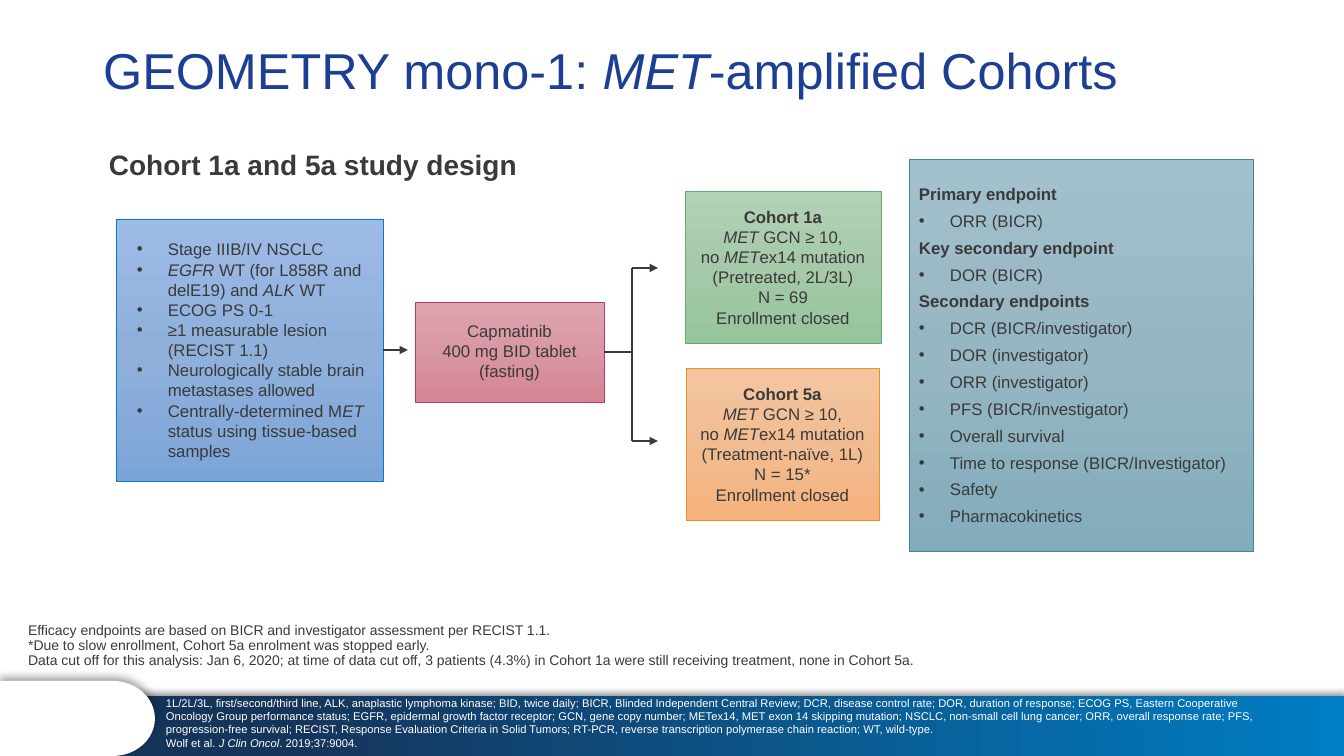
"""Build the GEOMETRY mono-1 study design slide."""
from math import cos, pi, sin

from lxml.etree import SubElement
from pptx import Presentation
from pptx.dml.color import RGBColor
from pptx.enum.shapes import MSO_CONNECTOR, MSO_SHAPE
from pptx.enum.text import MSO_ANCHOR, MSO_AUTO_SIZE, PP_ALIGN
from pptx.oxml import parse_xml
from pptx.oxml.ns import nsdecls, qn
from pptx.util import Pt

PX = 9072
INK = "3A3A3A"
color = RGBColor.from_string


def write(frame, lines, size, ink=INK, align=PP_ALIGN.LEFT, anchor=MSO_ANCHOR.MIDDLE,
          spacing=None, before=0, bullet=None):
    """Fill a frame; # opens a bold line and _ encloses italics."""
    frame.word_wrap = True
    frame.auto_size = MSO_AUTO_SIZE.NONE
    frame.vertical_anchor = anchor
    for number, line in enumerate(lines):
        para = frame.add_paragraph() if number else frame.paragraphs[0]
        bold = line.startswith("#")
        properties = para._p.get_or_add_pPr()
        left, hanging, tab = bullet if bullet and not bold else (0, 0, 0)
        properties.set("marL", str(left * PX))
        properties.set("indent", str(-hanging * PX))
        if left:
            SubElement(properties, qn("a:buFont"), typeface="Arial")
            SubElement(properties, qn("a:buChar"), char="•")
        else:
            SubElement(properties, qn("a:buNone"))
        if tab:
            tabs = SubElement(properties, qn("a:tabLst"))
            SubElement(tabs, qn("a:tab"), pos=str(tab * PX), algn="l")
        para.alignment = align
        para.space_before = Pt(before if number else 0)
        if spacing:
            para.line_spacing = spacing
        for part, text in enumerate(line.lstrip("#").split("_")):
            if text:
                span = para.add_run()
                span.text = text
                span.font.name = "Arial"
                span.font.size = Pt(size)
                span.font.bold = bold
                span.font.italic = part % 2 == 1
                span.font.color.rgb = color(ink)


def add_panel(x, y, width, height, stops, angle):
    """Add a rectangle filled with a linear gradient."""
    panel = page.shapes.add_shape(MSO_SHAPE.RECTANGLE, x * PX, y * PX, width * PX, height * PX)
    panel.shadow.inherit = False
    panel.line.fill.background()
    marks = "".join(f'<a:gs pos="{place * 1000}"><a:srgbClr val="{tone}"/></a:gs>'
                    for place, tone in stops)
    gradient = parse_xml(f'<a:gradFill {nsdecls("a")} rotWithShape="1"><a:gsLst>{marks}</a:gsLst>'
                         f'<a:lin ang="{angle * 60000}" scaled="0"/></a:gradFill>')
    panel._element.spPr.find(qn("a:prstGeom")).addnext(gradient)
    return panel


deck = Presentation()
deck.slide_width, deck.slide_height = 1344 * PX, 756 * PX
page = deck.slides.add_slide(deck.slide_layouts[1])

footer = add_panel(117, 696, 1227, 60, [(0, "007DC3"), (86, "15345A")], 180)
arc = [((113 + 42 * cos(step * pi / 24)) * PX, (718.5 + 37.5 * sin(step * pi / 24)) * PX)
       for step in range(-12, 13)]
outline = page.shapes.build_freeform(0, 681 * PX)
outline.add_line_segments(arc + [(0, 756 * PX)], close=True)
tab_shape = outline.convert_to_shape()
tab_shape.fill.solid()
tab_shape.fill.fore_color.rgb = color("FFFFFF")
tab_shape.line.fill.background()
tab_shape.shadow.inherit = False
for shape, blur, opacity in [(footer, 4, 40), (tab_shape, 6.1, 34)]:
    effects = shape._element.spPr.find(qn("a:effectLst"))
    shadow = SubElement(effects, qn("a:outerShdw"), blurRad=str(Pt(blur)), dist=str(Pt(3)),
                        dir="16200000", algn="b", rotWithShape="0")
    tone = SubElement(shadow, qn("a:srgbClr"), val="000000")
    SubElement(tone, qn("a:alpha"), val=str(opacity * 1000))

title = page.shapes.title
notes = page.placeholders[1]
subtitle = page.shapes.add_textbox(0, 0, PX, PX)
abbreviations = page.shapes.add_textbox(0, 0, PX, PX)
for box, x, y, width, height in [(title, 93, 0, 1159, 146), (notes, 18, 625, 1110, 49),
                                 (subtitle, 99, 143, 448, 42),
                                 (abbreviations, 156, 691, 1110, 65)]:
    box.left, box.top, box.width, box.height = x * PX, y * PX, width * PX, height * PX

write(title.text_frame, ["GEOMETRY mono-1: _MET_-amplified Cohorts"], 36, "1C3F93", spacing=0.9)
write(notes.text_frame, [
    "Efficacy endpoints are based on BICR and investigator assessment per RECIST 1.1.",
    "*Due to slow enrollment, Cohort 5a enrolment was stopped early.",
    "Data cut off for this analysis: Jan 6, 2020; at time of data cut off, 3 patients (4.3%) "
    "in Cohort 1a were still receiving treatment, none in Cohort 5a.",
], 10, anchor=MSO_ANCHOR.BOTTOM, spacing=0.9)
write(subtitle.text_frame, ["#Cohort 1a and 5a study design"], 20, anchor=MSO_ANCHOR.TOP)
write(abbreviations.text_frame, [
    "1L/2L/3L, first/second/third line, ALK, anaplastic lymphoma kinase; BID, twice daily; "
    "BICR, Blinded Independent Central Review; DCR, disease control rate; DOR, duration of "
    "response; ECOG PS, Eastern Cooperative Oncology Group performance status; EGFR, epidermal "
    "growth factor receptor; GCN, gene copy number; METex14, MET exon 14 skipping mutation; "
    "NSCLC, non-small cell lung cancer; ORR, overall response rate; PFS, progression-free "
    "survival; RECIST, Response Evaluation Criteria in Solid Tumors; RT-PCR, reverse "
    "transcription polymerase chain reaction; WT, wild-type.",
    "Wolf et al. _J Clin Oncol_. 2019;37:9004.",
], 8, "FFFFFF", anchor=MSO_ANCHOR.TOP)

centred = {"align": PP_ALIGN.CENTER}
panels = {
    "inclusion": ((116, 219, 267, 262), ("9DBBE5", "90B0DC", "7CA5D7"), "007DC3", [
        "Stage IIIB/IV NSCLC",
        "_EGFR_ WT (for L858R and delE19) and _ALK_ WT",
        "ECOG PS 0-1",
        "≥1 measurable lesion (RECIST 1.1)",
        "Neurologically stable brain metastases allowed",
        "Centrally-determined M_ET_ status using tissue-based samples",
    ], {"bullet": (42, 31, 36)}),
    "treatment": ((415, 302, 189, 100), ("DEA5B0", "D897A3", "D68394"), "BF3A61", [
        "Capmatinib", "400 mg BID tablet (fasting)",
    ], {"spacing": 0.99, **centred}),
    "cohort 1a": ((685, 191, 196, 152), ("B2D2B5", "A6CAA9", "96C49B"), "64AB6C", [
        "#Cohort 1a", "_MET_ GCN ≥ 10,", "no _MET_ex14 mutation (Pretreated, 2L/3L)",
        "N = 69", "Enrollment closed",
    ], centred),
    "cohort 5a": ((686, 368, 193, 152), ("F4C6A0", "F1BC92", "F5B37D"), "E8931A", [
        "#Cohort 5a", "_MET_ GCN ≥ 10,", "no _MET_ex14 mutation (Treatment-naïve, 1L)",
        "N = 15*", "Enrollment closed",
    ], centred),
    "endpoints": ((909, 159, 344, 392), ("A3C1CD", "96B6C2", "83ACBC"), "3A869B", [
        "#Primary endpoint", "ORR (BICR)", "#Key secondary endpoint", "DOR (BICR)",
        "#Secondary endpoints", "DCR (BICR/investigator)", "DOR (investigator)",
        "ORR (investigator)", "PFS (BICR/investigator)", "Overall survival",
        "Time to response (BICR/Investigator)", "Safety", "Pharmacokinetics",
    ], {"before": 4.8, "bullet": (31, 31, 0)}),
}
boxes = {}
for name, (place, tones, edge, lines, layout) in panels.items():
    box = add_panel(*place, list(zip((0, 50, 100), tones)), 90)
    box.line.color.rgb = color(edge)
    box.line.width = Pt(0.5)
    write(box.text_frame, lines, 12, **layout)
    boxes[name] = box

for x1, y1, x2, y2, arrow, source in [
    (383, 350, 408, 350, True, "inclusion"),
    (604, 352, 632, 352, False, "treatment"),
    (632, 268, 632, 441, False, None),
    (632, 268, 658, 268, True, None),
    (632, 441, 658, 441, True, None),
]:
    link = page.shapes.add_connector(MSO_CONNECTOR.STRAIGHT, x1 * PX, y1 * PX, x2 * PX, y2 * PX)
    if source:
        link.begin_connect(boxes[source], 3)
    link.line.color.rgb = color(INK)
    link.line.width = Pt(1)
    if arrow:
        SubElement(link.line._get_or_add_ln(), qn("a:tailEnd"), type="triangle")
    SubElement(link._element.spPr, qn("a:effectLst"))

deck.save("out.pptx")
